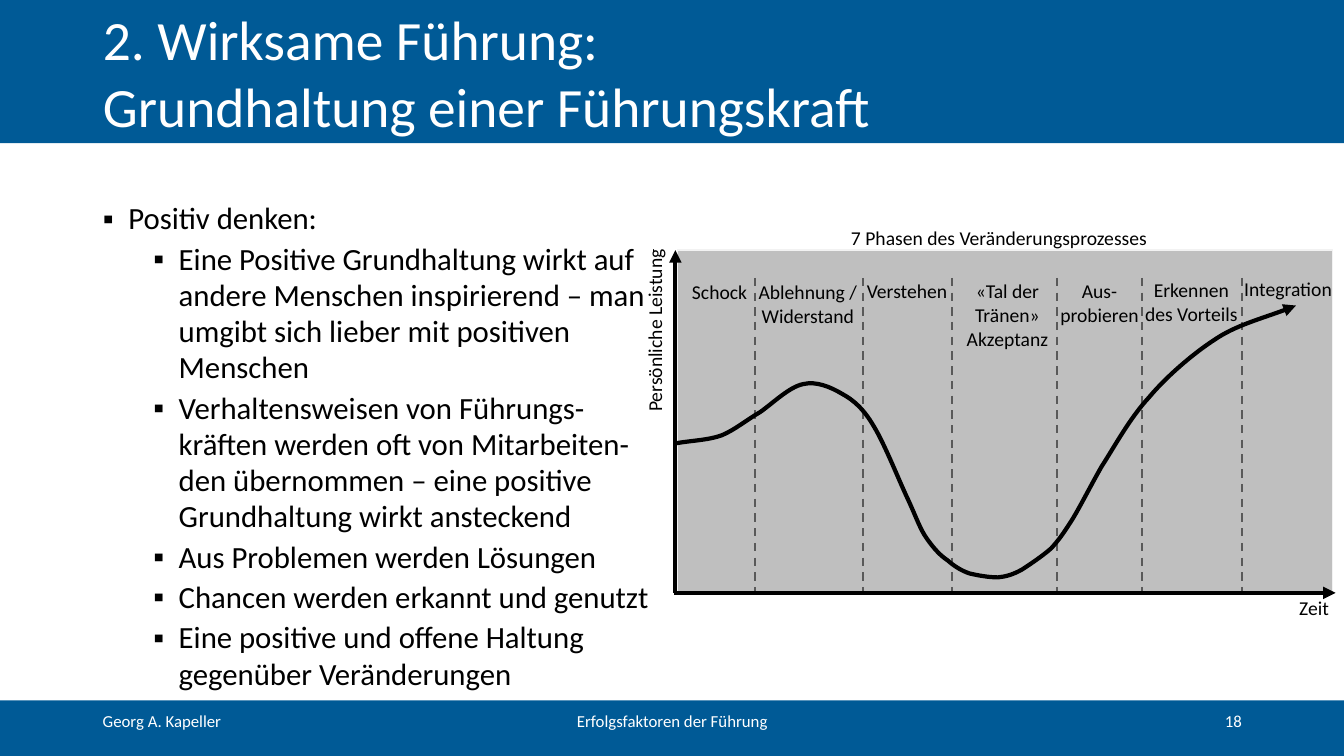
"""Build a slide on the attitude of a leader with the curve of the seven phases of change."""
from copy import deepcopy
from typing import NamedTuple

from lxml.etree import SubElement
from pptx import Presentation
from pptx.dml.color import RGBColor
from pptx.enum.dml import MSO_LINE_DASH_STYLE as Dash
from pptx.enum.shapes import MSO_CONNECTOR, MSO_SHAPE
from pptx.enum.text import MSO_ANCHOR as Anchor, MSO_AUTO_SIZE, PP_ALIGN as Align
from pptx.oxml.ns import qn
from pptx.util import Cm, Pt

BLUE = RGBColor(0x00, 0x5A, 0x96)
WHITE = RGBColor(0xFF, 0xFF, 0xFF)
BLACK = RGBColor(0x00, 0x00, 0x00)
PLOT_GREY = RGBColor(0xBF, 0xBF, 0xBF)
EDGE_GREY = RGBColor(0xF2, 0xF2, 0xF2)
DASH_GREY = RGBColor(0x59, 0x59, 0x59)
SLIDE_WIDTH, SLIDE_HEIGHT = 33.87, 19.05
HEADER_HEIGHT, FOOTER_TOP = 3.61, 17.65
TEXT_LEFT = 2.34
PLOT_TOP, PLOT_BOTTOM = 6.3, 14.94


class Box(NamedTuple):
    left: float
    top: float
    width: float
    height: float


class Label(NamedTuple):
    lines: list[str]
    box: Box
    align: Align = Align.CENTER
    rotation: float = 0


class Footer(NamedTuple):
    text: str
    left: float
    width: float
    align: Align


class Bullet(NamedTuple):
    text: str
    level: int = 1


TITLE = """2. Wirksame Führung:
Grundhaltung einer Führungskraft"""

BULLETS = [
    Bullet("Positiv denken:", 0),
    Bullet("Eine Positive Grundhaltung wirkt auf andere Menschen inspirierend – man "
           "umgibt sich lieber mit positiven Menschen"),
    Bullet("Verhaltensweisen von Führungs-kräften werden oft von Mitarbeiten-den "
           "übernommen – eine positive Grundhaltung wirkt ansteckend"),
    Bullet("Aus Problemen werden Lösungen"),
    Bullet("Chancen werden erkannt und genutzt"),
    Bullet("Eine positive und offene Haltung gegenüber Veränderungen"),
]
FOOTERS = [
    Footer("Georg A. Kapeller", TEXT_LEFT, 7.62, Align.LEFT),
    Footer("Erfolgsfaktoren der Führung", 11.23, 11.43, Align.CENTER),
    Footer("18", 23.93, 7.62, Align.RIGHT),
]
LABELS = [
    Label(["Persönliche Leistung"], Box(14.25, 7.8, 4.52, 0.64), Align.LEFT, 270),
    Label(["Zeit"], Box(32.74, 15.01, 0.94, 0.58), Align.LEFT),
    Label(["7 Phasen des Veränderungsprozesses"], Box(16.81, 5.69, 16.74, 0.61)),
    Label(["Schock"], Box(17.07, 7.06, 2.13, 0.58)),
    Label(["Ablehnung / Widerstand"], Box(19, 7.06, 2.72, 0.58)),
    Label(["Verstehen"], Box(21.74, 7.04, 2.24, 0.58)),
    Label(["«Tal der Tränen»", "Akzeptanz"], Box(24.03, 7.04, 2.72, 0.58)),
    Label(["Aus-probieren"], Box(26.67, 7.04, 2.08, 0.58)),
    Label(["Erkennen des Vorteils"], Box(28.78, 7.01, 2.49, 0.58)),
    Label(["Integration"], Box(31.34, 6.99, 2.24, 0.58)),
]
DIVIDERS = [19.02, 21.74, 23.98, 26.64, 28.78, 31.29]
CURVE_START = (16.99, 11.18)
CURVE = [
    (17.4, 11.1), (17.83, 11.1), (18.19, 10.97),
    (18.54, 10.82), (18.8, 10.59), (19.15, 10.39),
    (19.48, 10.16), (19.89, 9.75), (20.24, 9.68),
    (20.57, 9.6), (20.93, 9.75), (21.23, 9.93),
    (21.51, 10.08), (21.77, 10.31), (22.02, 10.74),
    (22.3, 11.2), (22.66, 12.12), (22.89, 12.6),
    (23.11, 13.08), (23.19, 13.34), (23.37, 13.59),
    (23.55, 13.84), (23.7, 14), (23.88, 14.12),
    (24.05, 14.27), (24.23, 14.38), (24.43, 14.45),
    (24.64, 14.5), (24.92, 14.55), (25.15, 14.55),
    (25.35, 14.53), (25.53, 14.48), (25.76, 14.35),
    (25.96, 14.22), (26.26, 14.02), (26.49, 13.82),
    (26.7, 13.59), (26.82, 13.41), (27.03, 13.08),
    (27.23, 12.75), (27.46, 12.29), (27.76, 11.76),
    (28.09, 11.25), (28.47, 10.54), (28.96, 10.01),
    (29.41, 9.47), (30.1, 8.89), (30.61, 8.56),
    (31.14, 8.2), (31.98, 7.98), (32.66, 7.7),
]


def write(paragraph, text: str, *, size: float, color: RGBColor = BLACK,
          align: Align = Align.LEFT) -> None:
    paragraph.text = text
    paragraph.alignment = align
    for run in paragraph.runs:
        run.font.name = "Calibri"
        run.font.size = Pt(size)
        run.font.color.rgb = color
    for line_break in paragraph._p.findall(qn("a:br")):
        line_break.append(deepcopy(paragraph.runs[0]._r.rPr))


def place(shape, box: Box) -> None:
    shape.left, shape.top, shape.width, shape.height = map(Cm, box)


def add_rectangle(slide, box: Box, fill: RGBColor, edge: RGBColor | None = None):
    shape = slide.shapes.add_shape(MSO_SHAPE.RECTANGLE, *map(Cm, box))
    shape.shadow.inherit = False
    shape.fill.solid()
    shape.fill.fore_color.rgb = fill
    if edge is None:
        shape.line.fill.background()
    else:
        shape.line.color.rgb = edge
        shape.line.width = Pt(1)
    return shape


def style_line(shape, color: RGBColor, width: float, *, arrow: bool = False) -> None:
    shape.line.color.rgb = color
    shape.line.width = Pt(width)
    if arrow:
        line = shape._element.spPr.find(qn("a:ln"))
        SubElement(line, qn("a:tailEnd"), type="triangle")


def add_line(slide, start: tuple[float, float], end: tuple[float, float]):
    line = slide.shapes.add_connector(MSO_CONNECTOR.STRAIGHT, *map(Cm, start + end))
    style_line(line, BLACK, 3)
    SubElement(line._element.spPr, qn("a:effectLst"))
    return line


def add_text_box(slide, box: Box):
    text_box = slide.shapes.add_textbox(*map(Cm, box))
    text_box.text_frame.word_wrap = True
    return text_box


def add_label(slide, label: Label) -> None:
    text_box = add_text_box(slide, label.box)
    text_box.rotation = label.rotation
    frame = text_box.text_frame
    frame.margin_left = frame.margin_right = frame.margin_top = frame.margin_bottom = 0
    for index, line in enumerate(label.lines):
        paragraph = frame.add_paragraph() if index else frame.paragraphs[0]
        write(paragraph, line, size=14, align=label.align)


def add_curve(slide) -> None:
    builder = slide.shapes.build_freeform(*map(Cm, CURVE_START))
    builder.add_line_segments([(Cm(x), Cm(y)) for x, y in CURVE], close=False)
    curve = builder.convert_to_shape()
    curve.shadow.inherit = False
    curve.fill.background()
    style_line(curve, BLACK, 3, arrow=True)
    segments = list(curve._element.iter(qn("a:lnTo")))
    outline = segments[0].getparent()
    for first in range(0, len(segments), 3):
        bezier = SubElement(outline, qn("a:cubicBezTo"))
        for segment in segments[first:first + 3]:
            bezier.append(segment[0])
            outline.remove(segment)


def fill_placeholders(slide) -> None:
    title, body = slide.placeholders
    place(title, Box(TEXT_LEFT, 0, 29.21, HEADER_HEIGHT))
    title.text_frame.vertical_anchor = Anchor.MIDDLE
    write(title.text_frame.paragraphs[0], TITLE, size=39.6, color=WHITE)
    place(body, Box(TEXT_LEFT, 4.93, 14.81, 12.22))
    for shape in (title, body):
        shape.text_frame.auto_size = MSO_AUTO_SIZE.NONE
    for index, bullet in enumerate(BULLETS):
        frame = body.text_frame
        paragraph = frame.add_paragraph() if index else frame.paragraphs[0]
        write(paragraph, bullet.text, size=22)
        paragraph.level = bullet.level
        paragraph.space_before = Pt(3)
        paragraph.line_spacing = 0.98
        properties = paragraph._p.get_or_add_pPr()
        properties.set("marL", str(Cm(0.64 + 1.27 * bullet.level)))
        properties.set("indent", str(Cm(-0.64)))
        SubElement(properties, qn("a:buFont"), typeface="Arial")
        SubElement(properties, qn("a:buChar"), char="▪")


def add_phase_chart(slide) -> None:
    add_rectangle(slide, Box(17.07, PLOT_TOP, 16.51, PLOT_BOTTOM - PLOT_TOP),
                  PLOT_GREY, EDGE_GREY)
    for start, end in [((16.99, PLOT_BOTTOM), (33.66, PLOT_BOTTOM)),
                       ((17.02, PLOT_BOTTOM), (17.02, PLOT_TOP))]:
        style_line(add_line(slide, start, end), BLACK, 3, arrow=True)
    for x in DIVIDERS:
        divider = add_line(slide, (x, 7), (x, 14.9))
        style_line(divider, DASH_GREY, 1.5)
        divider.line.dash_style = Dash.DASH
    add_curve(slide)
    for label in LABELS:
        add_label(slide, label)


def main() -> None:
    presentation = Presentation()
    presentation.slide_width, presentation.slide_height = Cm(SLIDE_WIDTH), Cm(SLIDE_HEIGHT)
    slide = presentation.slides.add_slide(presentation.slide_layouts[1])
    for top, height in [(0, HEADER_HEIGHT), (FOOTER_TOP, SLIDE_HEIGHT - FOOTER_TOP)]:
        bar = add_rectangle(slide, Box(0, top, SLIDE_WIDTH, height), BLUE)
        slide.shapes._spTree.insert(2, bar._element)
    fill_placeholders(slide)
    for footer in FOOTERS:
        text_box = add_text_box(slide, Box(footer.left, FOOTER_TOP, footer.width, 1.02))
        text_box.text_frame.vertical_anchor = Anchor.MIDDLE
        write(text_box.text_frame.paragraphs[0], footer.text, size=12, color=WHITE,
              align=footer.align)
    add_phase_chart(slide)
    presentation.save("out.pptx")


if __name__ == "__main__":
    main()
